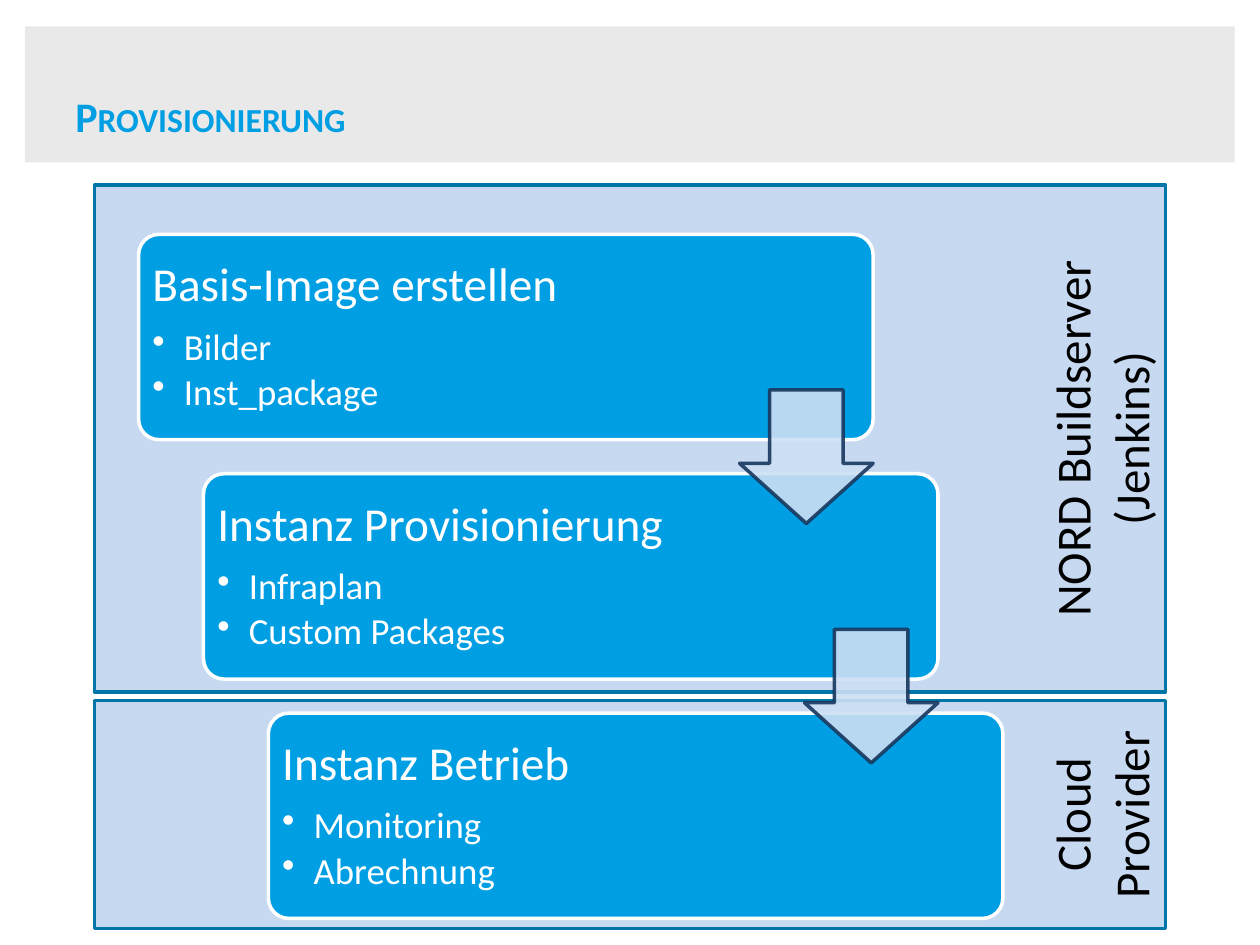
from lxml import etree
from pptx import Presentation
from pptx.dml.color import RGBColor
from pptx.enum.shapes import MSO_SHAPE
from pptx.enum.text import MSO_ANCHOR, PP_ALIGN
from pptx.oxml.ns import qn
from pptx.util import Inches, Pt

BOX = MSO_SHAPE.FLOWCHART_PROCESS
ROUND = MSO_SHAPE.ROUNDED_RECTANGLE
ARROW = MSO_SHAPE.DOWN_ARROW
MIDDLE, BOTTOM = MSO_ANCHOR.MIDDLE, MSO_ANCHOR.BOTTOM
LEFT, CENTER = PP_ALIGN.LEFT, PP_ALIGN.CENTER

BLUE, WHITE = "009EE2", "FFFFFF"
STEPS = [
    ("Basis-Image erstellen", ["Bilder", "Inst_package"]),
    ("Instanz Provisionierung", ["Infraplan", "Custom Packages"]),
    ("Instanz Betrieb", ["Monitoring", "Abrechnung"]),
]
ZONES = [
    ("Cloud Provider", 5.56, 1.81),
    ("NORD Buildserver (Jenkins)", 1.47, 4.02),
]
STEP_X, STEP_Y, GAP_X, GAP_Y = 1.1, 1.86, 0.515, 1.9
STEP_W, STEP_H, ARROW_W = 5.83, 1.63, 1.06


def color(fmt, code):
    fmt.rgb = RGBColor.from_string(code)


def apply(target, values):
    for name, value in values.items():
        setattr(target, name, value)


def add_shape(slide, kind, place, fill, line=None, adjust=()):
    shape = slide.shapes.add_shape(kind, *map(Inches, place))
    shape.shadow.inherit = False
    shape.fill.solid()
    color(shape.fill.fore_color, fill)
    if line:
        color(shape.line.color, line)
        shape.line.width = Pt(2)
    else:
        shape.line.fill.background()
    for i, value in enumerate(adjust):
        shape.adjustments[i] = value
    return shape


def write(para, text, size, code, look=None, font=None):
    run = para.add_run()
    run.text = text
    apply(para, look or {})
    apply(run.font, {"name": "Calibri", "size": Pt(size), **(font or {})})
    color(run.font.color, code)
    return run


def add_box(slide, place, inset):
    box = slide.shapes.add_textbox(*map(Inches, place))
    frame = box.text_frame
    sides = ("margin_left", "margin_top", "margin_right", "margin_bottom")
    apply(frame, {"word_wrap": True, "vertical_anchor": MIDDLE,
                  **dict(zip(sides, map(Inches, inset)))})
    return frame


def add_title(slide, text):
    frame = add_box(slide, (0.5, 0.29, 9, 1.25), (0.1, 0.05, 0.1, 0.05))
    run = write(frame.paragraphs[0], text, 24, BLUE,
                {"alignment": LEFT}, {"bold": True})
    run.font._element.set("cap", "small")


def add_zone(slide, text, top, height):
    zone = add_shape(slide, BOX, (0.75, top, 8.5, height), "C6D9F1", "0075A7")
    frame = zone.text_frame
    apply(frame, {"word_wrap": True, "vertical_anchor": BOTTOM})
    frame._txBody.bodyPr.set("vert", "vert270")
    write(frame.paragraphs[0], text, 28, "000000", {"alignment": CENTER})


def add_bullet(para):
    props = para._p.get_or_add_pPr()
    props.set("marL", str(Inches(0.25)))
    props.set("indent", str(Inches(-0.25)))
    etree.SubElement(props, qn("a:buChar")).set("char", "•")


def add_step(slide, x, y, head, items):
    add_shape(slide, ROUND, (x, y, STEP_W, STEP_H), BLUE, WHITE, [0.1])
    frame = add_box(slide, (x, y, 4.26, STEP_H), [0.11] * 4)
    write(frame.paragraphs[0], head, 27, WHITE,
          {"line_spacing": 0.9, "space_after": Pt(9.45)})
    for item in items:
        para = frame.add_paragraph()
        add_bullet(para)
        write(para, item, 21, WHITE,
              {"line_spacing": 0.9, "space_after": Pt(3.15)})


def add_arrow(slide, x, y):
    arrow = add_shape(slide, ARROW, (x, y, ARROW_W, ARROW_W),
                      "CCDFF4", "17375E", [0.55, 0.45])
    for tint in arrow._element.spPr.iter(qn("a:srgbClr")):
        etree.SubElement(tint, qn("a:alpha")).set("val", "90000")


def main():
    deck = Presentation()
    apply(deck, {"slide_width": Inches(10), "slide_height": Inches(7.5)})
    slide = deck.slides.add_slide(deck.slide_layouts[6])
    add_shape(slide, MSO_SHAPE.RECTANGLE, (0.2, 0.21, 9.6, 1.08), "E9E9EA")
    for zone in ZONES:
        add_zone(slide, *zone)
    add_title(slide, "Provisionierung")
    spots = [(STEP_X + i * GAP_X, STEP_Y + i * GAP_Y)
             for i in range(len(STEPS))]
    for (x, y), (head, items) in zip(spots, STEPS):
        add_step(slide, x, y, head, items)
    for x, y in spots[:-1]:
        add_arrow(slide, x + STEP_W - ARROW_W, y + 1.235)
    deck.save("out.pptx")


if __name__ == "__main__":
    main()
